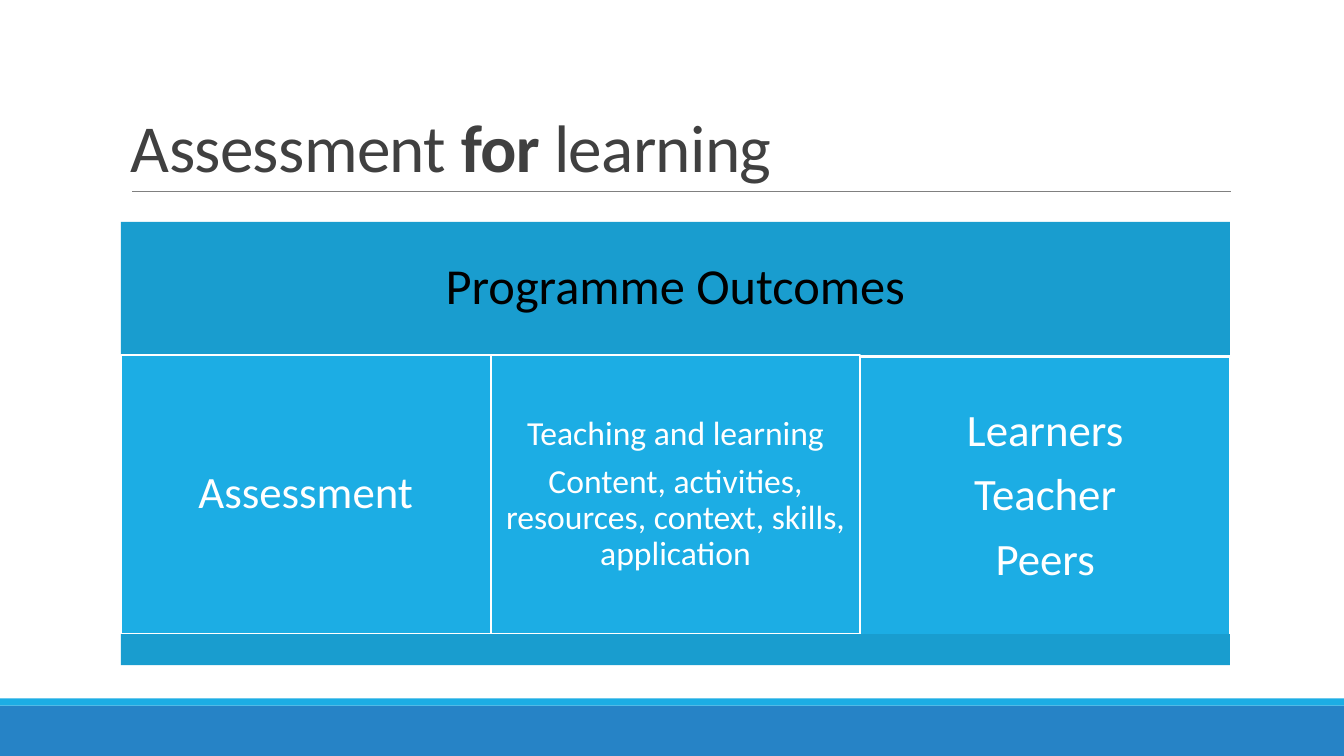
from dataclasses import dataclass
from pptx import Presentation
from pptx import util as u
from pptx.dml.color import RGBColor
from pptx.enum import shapes, text


@dataclass(frozen=True)
class Theme:
    font: str = "Calibri"
    footer: str = "2683C6"
    accent: str = "1CADE4"
    band: str = "199DCF"
    rule: str = "808080"
    title: str = "404040"
    dark: str = "000000"
    light: str = "FFFFFF"
    title_size: int = 48
    heading_size: int = 36
    large_size: int = 32
    small_size: int = 24


theme = Theme()
deck = Presentation()
deck.slide_width, deck.slide_height = u.Inches(13.33), u.Inches(7.5)
page = deck.slides.add_slide(deck.slide_layouts[6])


def add_box(left, top, width, height, fill, outline=None):
    box = page.shapes.add_shape(shapes.MSO_SHAPE.RECTANGLE, *map(u.Inches, (left, top, width, height)))
    box.shadow.inherit = False
    box.fill.solid()
    box.fill.fore_color.rgb = RGBColor.from_string(fill)
    if outline:
        box.line.color.rgb = RGBColor.from_string(outline)
        box.line.width = u.Pt(1.25)
    else:
        box.line.fill.background()
    return box


def write(box, lines, size, color, inset):
    frame = box.text_frame
    frame_format = {"word_wrap": True, "vertical_anchor": text.MSO_ANCHOR.MIDDLE}
    for side in ("left", "top", "right", "bottom"):
        frame_format[f"margin_{side}"] = u.Inches(inset)
    for name, value in frame_format.items():
        setattr(frame, name, value)
    para_format = {"alignment": text.PP_ALIGN.CENTER, "line_spacing": 0.9, "space_after": u.Pt(0.35 * size)}
    for index, line in enumerate(lines):
        para = frame.paragraphs[0] if index == 0 else frame.add_paragraph()
        for name, value in para_format.items():
            setattr(para, name, value)
        span = para.add_run()
        span.text = line
        span.font.name, span.font.size = theme.font, u.Pt(size)
        span.font.color.rgb = RGBColor.from_string(color)


# Footer stripes
add_box(0, 7, 13.33, 0.5, theme.footer)
add_box(0, 6.93, 13.33, 0.07, theme.accent)

# Rule under the title
rule = page.shapes.add_connector(
    shapes.MSO_CONNECTOR.STRAIGHT, u.Inches(1.31), u.Inches(1.9), u.Inches(12.21), u.Inches(1.9))
rule.line.color.rgb = RGBColor.from_string(theme.rule)
rule.line.width = u.Pt(0.5)
rule._element.spPr.add_effectLst() if hasattr(rule._element.spPr, "add_effectLst") else \
    rule._element.spPr.get_or_change_to_effectLst() if hasattr(rule._element.spPr, "get_or_change_to_effectLst") else \
    rule._element.spPr.get_or_add_effectLst()

# Title
title = page.shapes.add_textbox(u.Inches(1.2), u.Inches(0.31), u.Inches(11), u.Inches(1.59))
title.text_frame.word_wrap = True
title.text_frame.vertical_anchor = text.MSO_ANCHOR.BOTTOM
para = title.text_frame.paragraphs[0]
para.line_spacing = 0.85
for words, bold in (("Assessment ", False), ("for", True), (" learning", False)):
    span = para.add_run()
    span.text = words
    for name, value in {"name": theme.font, "size": u.Pt(theme.title_size), "bold": bold}.items():
        setattr(span.font, name, value)
    span.font.color.rgb = RGBColor.from_string(theme.title)
    span._r.get_or_add_rPr().set("spc", "-50")

# Heading band
left, width = 1.2, 11
heading = add_box(left, 2.2, width, 1.32, theme.band)
write(heading, ["Programme Outcomes"], theme.heading_size, theme.dark, 0.15)

# Three columns: lines, type size, inset, top
columns = [
    (["Assessment"], theme.large_size, 0.13, 3.52),
    (["Teaching and learning", "Content, activities, resources, context, skills, application"],
     theme.small_size, 0.1, 3.52),
    (["Learners", "Teacher", "Peers"], theme.large_size, 0.13, 3.54),
]
column_width = width / len(columns)
for index, (lines, size, inset, top) in enumerate(columns):
    column = add_box(left + index * column_width, top, column_width, 2.77, theme.accent, theme.light)
    write(column, lines, size, theme.light, inset)

# Closing band
add_box(left, 6.29, width, 0.31, theme.band)

deck.save("out.pptx")
